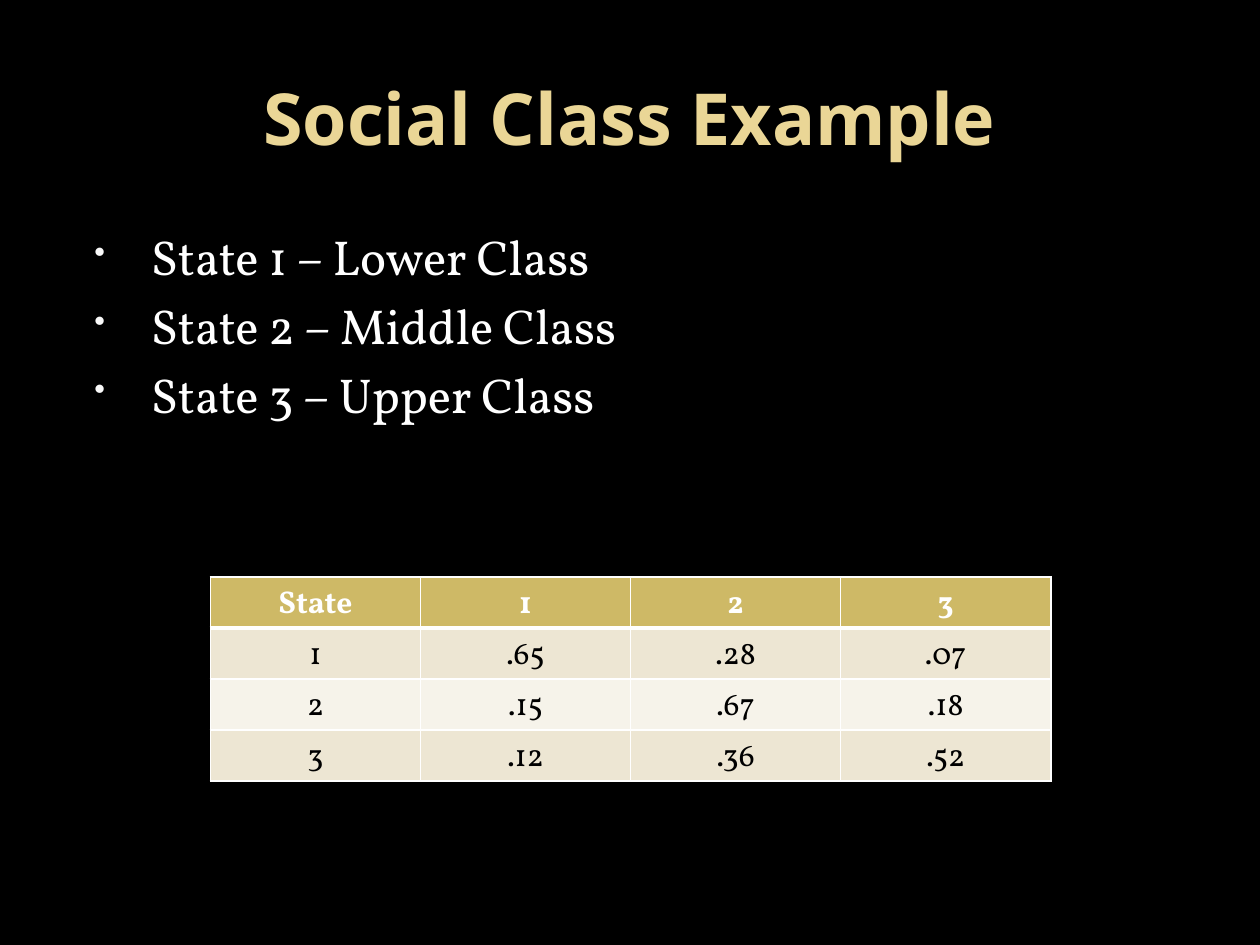
import pptx
import pptx.util
import pptx.dml.color
import pptx.enum.text
import pptx.oxml
import pptx.oxml.ns
from lxml import etree

Inches = pptx.util.Inches
Pt = pptx.util.Pt
RGBColor = pptx.dml.color.RGBColor
CENTER = pptx.enum.text.PP_ALIGN.CENTER
MIDDLE = pptx.enum.text.MSO_ANCHOR.MIDDLE
qn = pptx.oxml.ns.qn

BLACK = RGBColor(0x00, 0x00, 0x00)
WHITE = RGBColor(0xFF, 0xFF, 0xFF)
BULLET = RGBColor(0xF9, 0xF9, 0xF9)
TITLE = RGBColor(0xEA, 0xD6, 0x96)
GOLD = RGBColor(0xCE, 0xB9, 0x66)
SAND = RGBColor(0xED, 0xE6, 0xD3)
IVORY = RGBColor(0xF6, 0xF3, 0xEA)

TITLE_FONT = {"name": "Open Sans", "size": Pt(41), "bold": True}
BODY_FONT = {"name": "Vollkorn", "size": Pt(28), "bold": False}
HEAD_FONT = {"name": "Vollkorn", "size": Pt(18), "bold": True}
CELL_FONT = {**HEAD_FONT, "bold": False}

CLASSES = ["State 1 – Lower Class", "State 2 – Middle Class", "State 3 – Upper Class"]
TRANSITIONS = [
    ["State", "1", "2", "3"],
    ["1", ".65", ".28", ".07"],
    ["2", ".15", ".67", ".18"],
    ["3", ".12", ".36", ".52"],
]


def add_run(p, text, font, color):
    r = p.add_run()
    r.text = text
    for key, value in font.items():
        setattr(r.font, key, value)
    r.font.color.rgb = color


def add_text_frame(s, box):
    tf = s.shapes.add_textbox(*map(Inches, box)).text_frame
    tf.word_wrap = True
    return tf


def add_title(s, box, text):
    tf = add_text_frame(s, box)
    tf.vertical_anchor = MIDDLE
    p = tf.paragraphs[0]
    p.alignment = CENTER
    add_run(p, text, TITLE_FONT, TITLE)


def set_bullet(p):
    pPr = p._p.get_or_add_pPr()
    pPr.set("marL", str(Inches(0.6)))
    pPr.set("indent", str(Inches(-0.45)))
    for parent, child, value in (
        ("a:spcBef", "a:spcPct", "20000"),
        ("a:buClr", "a:srgbClr", str(BULLET)),
    ):
        node = etree.SubElement(pPr, qn(parent))
        etree.SubElement(node, qn(child)).set("val", value)
    etree.SubElement(pPr, qn("a:buSzPct")).set("val", "65000")
    etree.SubElement(pPr, qn("a:buChar")).set("char", "•")


def add_bullets(s, box, lines):
    tf = add_text_frame(s, box)
    for i, line in enumerate(lines):
        p = tf.add_paragraph() if i else tf.paragraphs[0]
        set_bullet(p)
        add_run(p, line, BODY_FONT, WHITE)


def set_borders(cell, row):
    tcPr = cell._tc.get_or_add_tcPr()
    heavy = {0: "lnB", 1: "lnT"}.get(row)
    for side in ("lnL", "lnR", "lnT", "lnB"):
        ln = etree.SubElement(tcPr, qn(f"a:{side}"))
        ln.set("w", str(Pt(3 if side == heavy else 1)))
        fill = etree.SubElement(ln, qn("a:solidFill"))
        etree.SubElement(fill, qn("a:srgbClr")).set("val", str(WHITE))


def add_transition_table(s, box, rows):
    table = s.shapes.add_table(len(rows), len(rows[0]), *map(Inches, box)).table
    for i, row in enumerate(rows):
        font, color = (CELL_FONT, BLACK) if i else (HEAD_FONT, WHITE)
        fill = (SAND if i % 2 else IVORY) if i else GOLD
        for j, text in enumerate(row):
            cell = table.cell(i, j)
            set_borders(cell, i)
            cell.fill.solid()
            cell.fill.fore_color.rgb = fill
            p = cell.text_frame.paragraphs[0]
            p.alignment = CENTER
            add_run(p, text, font, color)


def main():
    prs = pptx.Presentation()
    prs.slide_width = Inches(10)
    prs.slide_height = Inches(7.5)
    s = prs.slides.add_slide(prs.slide_layouts[6])
    s.background.fill.solid()
    s.background.fill.fore_color.rgb = BLACK
    add_title(s, (0.5, 0.3, 9, 1.25), "Social Class Example")
    add_bullets(s, (0.5, 1.75, 9, 5.15), CLASSES)
    add_transition_table(s, (1.67, 4.58, 6.67, 1.62), TRANSITIONS)
    prs.save("out.pptx")


if __name__ == "__main__":
    main()
